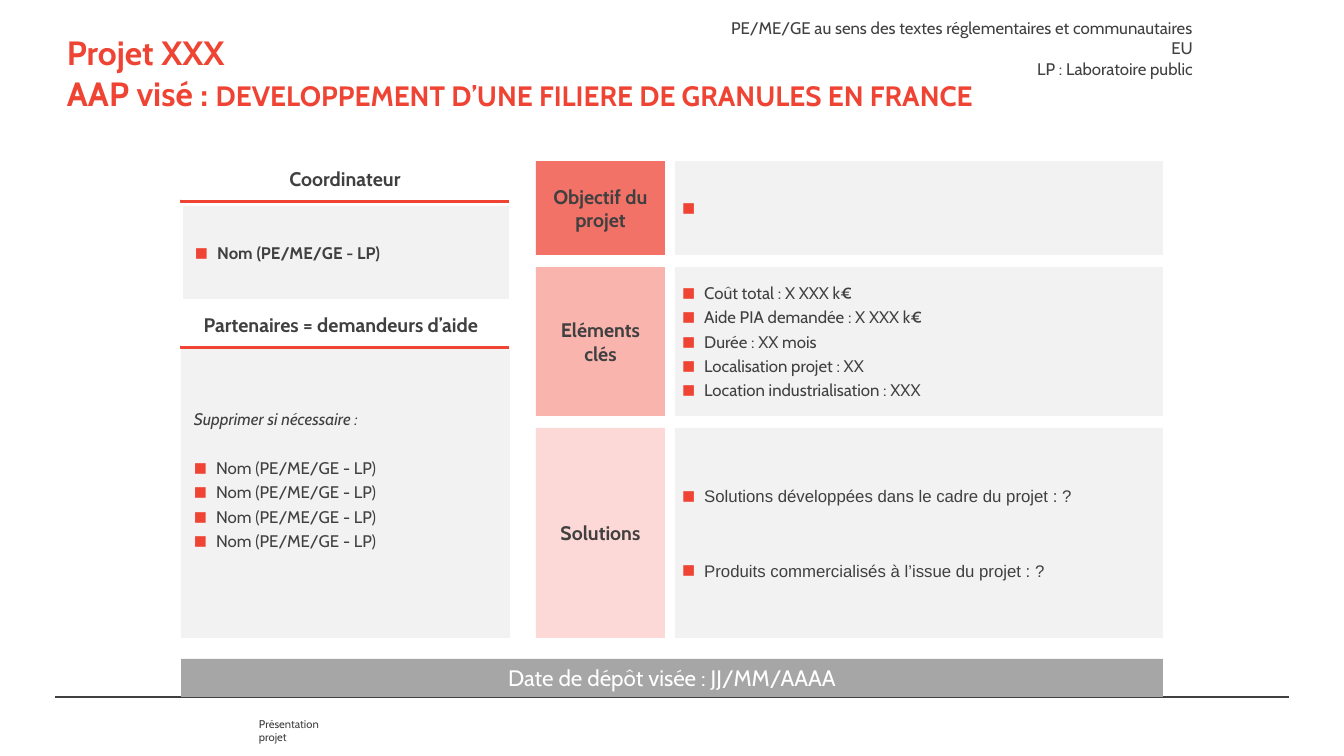
from lxml.etree import SubElement, fromstring
from pptx import Presentation
from pptx.dml.color import RGBColor
from pptx.enum.shapes import MSO_CONNECTOR, MSO_SHAPE
from pptx.enum.text import MSO_ANCHOR as ANCHOR, MSO_AUTO_SIZE, PP_ALIGN as ALIGN
from pptx.oxml import parse_xml
from pptx.oxml.ns import nsdecls, qn
from pptx.util import Emu, Pt

SCALE = 12192000 / 1344
RED, DARK, LIGHT, WHITE = "EF4333", "404040", "F2F2F2", "FFFFFF"
hex_color = RGBColor.from_string


def px(*lengths):
    return [Emu(round(length * SCALE)) for length in lengths]


def write(frame, lines, size=12, color=DARK, font="Cabin", bold=False,
          align=ALIGN.LEFT, anchor=ANCHOR.MIDDLE, margins=(10, 5, 10, 5), bullets=False):
    frame.text = "\n".join(lines)
    frame.word_wrap = True
    frame.auto_size = MSO_AUTO_SIZE.NONE
    frame.vertical_anchor = anchor
    frame.margin_left, frame.margin_top, frame.margin_right, frame.margin_bottom = px(*margins)
    for paragraph in frame.paragraphs:
        paragraph.alignment = align
        if bullets:
            properties = paragraph._p.get_or_add_pPr()
            properties.set("marL", "228600")
            properties.set("indent", "-201168")
            for bullet_part in (
                f'<a:buClr {nsdecls("a")}><a:srgbClr val="{RED}"/></a:buClr>',
                f'<a:buSzPct {nsdecls("a")} val="130000"/>',
                f'<a:buFont {nsdecls("a")} typeface="Arial"/>',
                f'<a:buChar {nsdecls("a")} char="■"/>',
            ):
                properties.append(parse_xml(bullet_part))
            paragraph.space_after = Pt(3)
        for run in paragraph.runs:
            run.font.name, run.font.size, run.font.bold = font, Pt(size), bold
            run.font.color.rgb = hex_color(color)


deck = Presentation()
deck.slide_width, deck.slide_height = px(1344, 756)
slide = deck.slides.add_slide(deck.slide_layouts[5])
shapes = slide.shapes

project = shapes.title
project.left, project.top, project.width, project.height = px(67, 30, 1210, 85)
write(project.text_frame, ["Projet XXX\vAAP visé : "], 24, RED, bold=True, margins=(0, 5, 0, 5))
call = project.text_frame.paragraphs[0].add_run()
call.text = "DEVELOPPEMENT D’UNE FILIERE DE GRANULES EN FRANCE"
call.font.name, call.font.size, call.font.bold = "Cabin", Pt(20), True
call.font.color.rgb = hex_color(RED)

footer_rule = shapes.add_connector(MSO_CONNECTOR.STRAIGHT, *px(55, 697, 1289, 697))
footer_rule.line.color.rgb = hex_color(DARK)
footer_rule.line.width = Pt(1.5)
SubElement(footer_rule._element.spPr, qn("a:effectLst"))

footer = shapes.add_textbox(*px(259, 717, 89, 13))
write(footer.text_frame, ["Présentation projet"], 8, anchor=ANCHOR.TOP, margins=(0, 0, 0, 0))

legend = shapes.add_textbox(*px(712, 13, 491, 50))
write(legend.text_frame,
      ["PE/ME/GE au sens des textes réglementaires et communautaires EU", "LP : Laboratoire public"],
      align=ALIGN.RIGHT, anchor=ANCHOR.TOP)

label = dict(size=14, bold=True, align=ALIGN.CENTER, margins=(0, 0, 0, 0))
listing = dict(bullets=True, margins=(4, 4, 4, 4))
member = "Nom (PE/ME/GE - LP)"
header = dict(size=14, bold=True, align=ALIGN.CENTER, anchor=ANCHOR.BOTTOM)
panels = [
    ((536, 161, 129, 94), "F27268", ["Objectif du projet"], label),
    ((675, 161, 488, 94), LIGHT, [" "], listing),
    ((536, 267, 129, 149), "F9B4AD", ["Eléments\vclés"], label),
    ((675, 267, 488, 149), LIGHT,
     ["Coût total : X XXX k€", "Aide PIA demandée : X XXX k€", "Durée : XX mois",
      "Localisation projet : XX", "Location industrialisation : XXX"], listing),
    ((536, 428, 129, 210), "FCD9D6", ["Solutions"], label),
    ((675, 428, 488, 210), LIGHT,
     ["Solutions développées dans le cadre du projet : ?",
      "Produits commercialisés à l’issue du projet : ?"], dict(listing, font="Arial")),
    ((181, 346, 329, 292), LIGHT, ["Supprimer si nécessaire :"] + [member] * 4,
     dict(bullets=True, margins=(10, 5, 10, 29))),
    ((181, 659, 982, 38), "A6A6A6", ["Date de dépôt visée : JJ/MM/AAAA"],
     dict(size=16, color=WHITE, align=ALIGN.CENTER)),
    ((181, 155, 328, 45), WHITE, ["Coordinateur"], dict(header, margins=(10, 10, 10, 10))),
    ((181, 301, 328, 45), WHITE, ["Partenaires = demandeurs d’aide"],
     dict(header, margins=(10, 10, 18, 10))),
]
for area, fill, lines, style in panels:
    panel = shapes.add_shape(MSO_SHAPE.RECTANGLE, *px(*area))
    panel.shadow.inherit = False
    panel.fill.solid()
    panel.fill.fore_color.rgb = hex_color(fill)
    panel.line.fill.background()
    write(panel.text_frame, lines, **style)
    paragraphs = panel.text_frame.paragraphs
    if fill == WHITE:
        panel.line.color.rgb = hex_color(WHITE)
        panel.line.width = Pt(0.75)
        panel._element.spPr.find(qn("a:effectLst")).append(parse_xml(
            f'<a:outerShdw {nsdecls("a")} blurRad="0" dist="25400" dir="5400000" algn="t" '
            f'rotWithShape="0"><a:srgbClr val="{RED}"/></a:outerShdw>'))
    if lines[0].startswith("Supprimer"):
        hint = paragraphs[0]._p.pPr
        hint.set("marL", "27432")
        hint.set("indent", "0")
        for bullet_part in ("a:buClr", "a:buSzPct", "a:buFont", "a:buChar"):
            hint.remove(hint.find(qn(bullet_part)))
        SubElement(hint, qn("a:buNone"))
        paragraphs[0].runs[0].font.italic = True
        paragraphs[1].space_before = Pt(17.4)
    if lines[0].startswith("Solutions dév"):
        paragraphs[1].space_before = Pt(36)

coordinator = shapes.add_table(1, 1, *px(182, 205, 328, 96)).table
coordinator.first_row = coordinator.horz_banding = False
name_cell = coordinator.cell(0, 0)
write(name_cell.text_frame, [member], bold=True, bullets=True)
name_cell.vertical_anchor = ANCHOR.MIDDLE
name_cell.margin_left, name_cell.margin_top, name_cell.margin_right, name_cell.margin_bottom = px(10, 5, 10, 5)
name_cell.fill.solid()
name_cell.fill.fore_color.rgb = hex_color(LIGHT)
name_cell._tc.tcPr.insert(0, fromstring(
    f'<a:lnB {nsdecls("a")} w="38100"><a:solidFill><a:srgbClr val="{WHITE}"/></a:solidFill></a:lnB>'))

deck.save("out.pptx")
